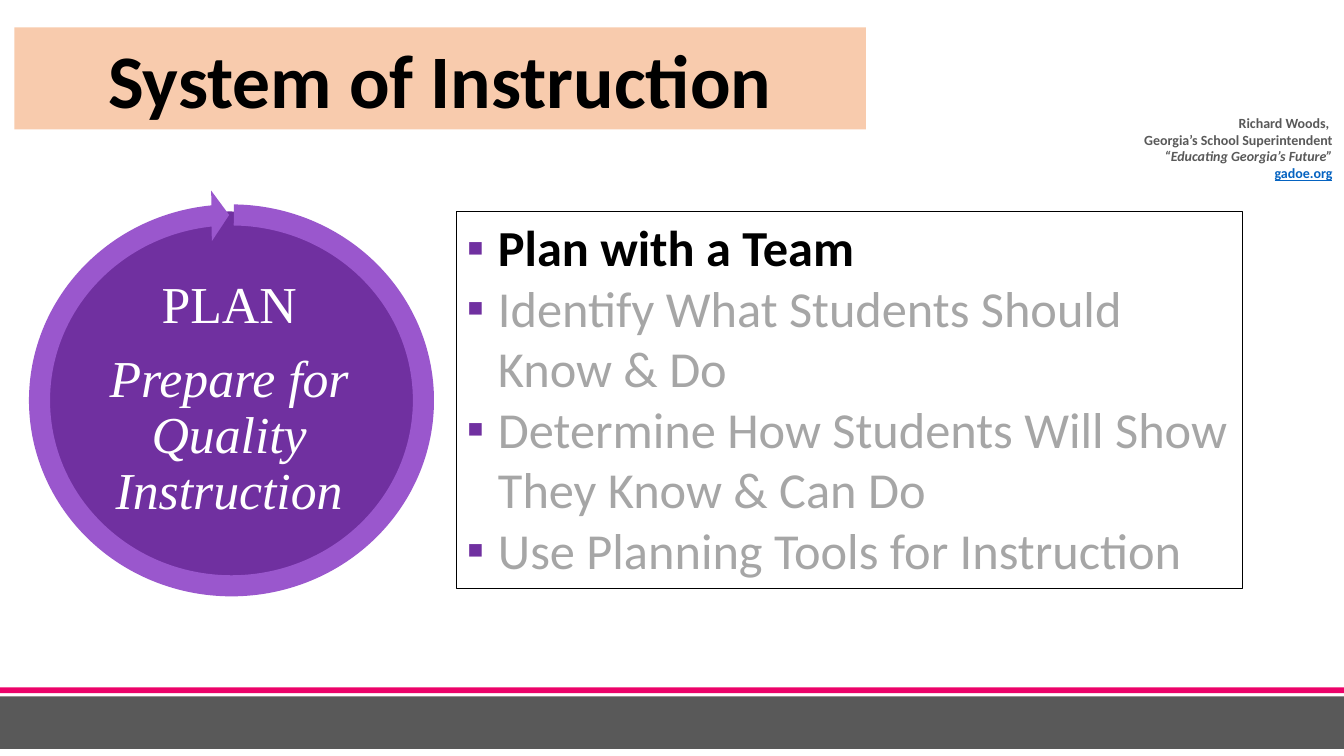
from lxml import etree
from pptx import Presentation
from pptx import util as u
from pptx.dml.color import RGBColor
from pptx.enum import shapes, text
from pptx.oxml import ns

COLORS = {
    "black": "000000",
    "white": "FFFFFF",
    "gray": "595959",
    "muted": "A6A6A6",
    "pink": "EC0269",
    "peach": "F8CBAD",
    "purple": "7030A0",
    "lilac": "9A57CD",
    "link": "0563C1",
}
ALIGN = text.PP_ALIGN
ANCHOR = text.MSO_ANCHOR
SHAPE = shapes.MSO_SHAPE


def rgb(name):
    return RGBColor.from_string(COLORS[name])


class SlideBuilder:
    body_font = "Calibri"
    circle_font = "Times New Roman"
    bullet_indent = u.Cm(0.79)

    def __init__(self, deck):
        self.slide = deck.slides.add_slide(deck.slide_layouts[5])

    def title(self, wording, box):
        heading = self.slide.shapes.title
        heading.left, heading.top, heading.width, heading.height = map(u.Cm, box)
        heading.fill.solid()
        heading.fill.fore_color.rgb = rgb("peach")
        self.fill_text(heading, [(wording, {"bold": True})], 54, "black", ALIGN.CENTER)

    def shape(self, kind, box, fill=None, line=None, adjustments=()):
        figure = self.slide.shapes.add_shape(kind, *map(u.Cm, box))
        figure.shadow.inherit = False
        if fill:
            figure.fill.solid()
            figure.fill.fore_color.rgb = rgb(fill)
        else:
            figure.fill.background()
        if line:
            figure.line.color.rgb = rgb(line)
            figure.line.width = u.Pt(0.75)
        else:
            figure.line.fill.background()
        for index, value in enumerate(adjustments):
            figure.adjustments[index] = value
        return figure

    def textbox(self, box, lines, size, color, align, margin=None, **options):
        label = self.slide.shapes.add_textbox(*map(u.Cm, box))
        self.fill_text(label, lines, size, color, align, anchor=ANCHOR.MIDDLE, **options)
        if margin is not None:
            frame = label.text_frame
            frame.margin_left = frame.margin_right = u.Cm(margin)
            frame.margin_top = frame.margin_bottom = u.Cm(margin)

    def bullet_box(self, box, lines, size):
        steps = self.shape(SHAPE.RECTANGLE, box, line="black")
        self.fill_text(steps, lines, size, "muted", ALIGN.LEFT, bullet="▪")

    def fill_text(self, holder, lines, size, color, align, anchor=ANCHOR.TOP,
                  font=body_font, bullet=None, line_spacing=None, space_after=None):
        frame = holder.text_frame
        frame.word_wrap = True
        frame.auto_size = text.MSO_AUTO_SIZE.NONE
        frame.vertical_anchor = anchor
        frame.text = "\n".join(wording for wording, _ in lines)
        for paragraph, (_, style) in zip(frame.paragraphs, lines):
            paragraph.alignment = align
            paragraph.line_spacing = line_spacing
            paragraph.space_after = space_after
            if bullet:
                self.add_bullet(paragraph, bullet)
            for run in paragraph.runs:
                run.font.name = font
                run.font.size = u.Pt(size)
                run.font.bold = style.get("bold", False)
                run.font.italic = style.get("italic", False)
                run.font.underline = style.get("underline", False)
                run.font.color.rgb = rgb(style.get("color", color))

    def add_bullet(self, paragraph, character):
        properties = paragraph._p.get_or_add_pPr()
        properties.set("marL", str(self.bullet_indent))
        properties.set("indent", str(-self.bullet_indent))
        tint = etree.SubElement(properties, ns.qn("a:buClr"))
        etree.SubElement(tint, ns.qn("a:srgbClr"), val=COLORS["purple"])
        etree.SubElement(properties, ns.qn("a:buFont"), typeface="Arial")
        etree.SubElement(properties, ns.qn("a:buChar"), char=character)


def main():
    deck = Presentation()
    deck.slide_width, deck.slide_height = u.Cm(33.87), u.Cm(19.05)
    page = SlideBuilder(deck)

    page.shape(SHAPE.RECTANGLE, (0, 17.55, 33.87, 1.32), "gray")
    page.shape(SHAPE.RECTANGLE, (-0.05, 17.32, 33.93, 0.15), "pink")
    page.textbox((26.57, 2.84, 7.26, 1.78), [
        ("Richard Woods, ", {"bold": True}),
        ("Georgia’s School Superintendent", {"bold": True}),
        ("“Educating Georgia’s Future”", {"bold": True, "italic": True}),
        ("gadoe.org", {"bold": True, "underline": True, "color": "link"}),
    ], 10, "gray", ALIGN.RIGHT)

    page.title("System of Instruction", (0.36, 0.69, 21.46, 2.57))

    page.shape(SHAPE.OVAL, (0.81, 5.33, 9.96, 9.5), "purple")
    page.textbox((2.46, 6.91, 6.63, 6.32), [
        ("PLAN", {}),
        ("Prepare for Quality Instruction", {"italic": True}),
    ], 37, "white", ALIGN.CENTER, margin=0.13, font=page.circle_font,
        line_spacing=0.9, space_after=u.Pt(13))
    page.shape(SHAPE.CIRCULAR_ARROW, (0.36, 4.78, 10.95, 10.62), "lilac",
               adjustments=(0.05, 3.28, 158.29, 162.44, 0.06))

    page.bullet_box((11.51, 5.33, 19.81, 9.5), [
        ("Plan with a Team", {"bold": True, "color": "black"}),
        ("Identify What Students Should Know & Do", {}),
        ("Determine How Students Will Show They Know & Can Do", {}),
        ("Use Planning Tools for Instruction", {}),
    ], 36)

    deck.save("out.pptx")


if __name__ == "__main__":
    main()
